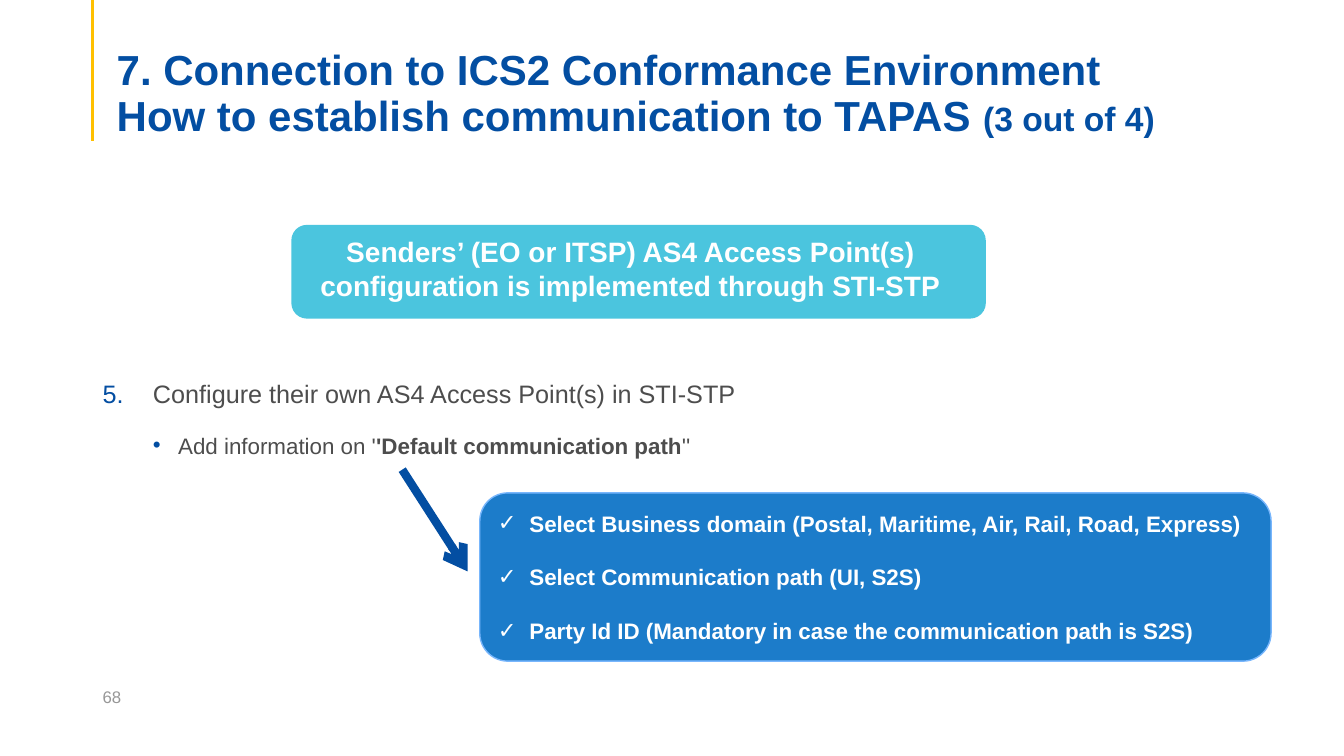
"""Build the slide on configuring the AS4 access points in STI-STP."""
from dataclasses import dataclass, field
from typing import Any

from lxml import etree
from pptx import Presentation
from pptx import util as u
from pptx.dml.color import RGBColor
from pptx.enum import shapes, text
from pptx.oxml import ns
from pptx.slide import Slide
from pptx.text.text import TextFrame

NAVY = RGBColor(0x03, 0x4E, 0xA2)
BLUE = RGBColor(0x1C, 0x7C, 0xCA)
SKY = RGBColor(0x78, 0xB6, 0xFC)
TEAL = RGBColor(0x4B, 0xC5, 0xDE)
GOLD = RGBColor(0xFF, 0xC0, 0x00)
DARK_GREY = RGBColor(0x4D, 0x4D, 0x4D)
LIGHT_GREY = RGBColor(0x97, 0x97, 0x97)
WHITE = RGBColor(0xFF, 0xFF, 0xFF)

Frame = tuple[float, float, float, float]
CHECK = {"buChar": {"char": "✓"}}
DOT = {"buChar": {"char": "•"}}
FROM_FIVE = {"buAutoNum": {"type": "arabicPeriod", "startAt": "5"}}


@dataclass(frozen=True)
class Piece:
    """A stretch of text in one font."""
    words: str
    size: float
    color: RGBColor
    bold: bool = False


@dataclass(frozen=True)
class Line:
    """A paragraph with its layout and bullet."""
    pieces: list[Piece]
    layout: dict[str, Any] = field(default_factory=dict)
    bullet: dict[str, dict[str, str]] = field(default_factory=dict)
    bullet_color: RGBColor = WHITE
    margin: float = 0
    hanging: float = 0


@dataclass(frozen=True)
class TextArea:
    """A text box with its frame and paragraphs."""
    frame: Frame
    lines: list[Line]
    anchor: text.MSO_ANCHOR = text.MSO_ANCHOR.TOP
    bottom_inset: float = 3.6


@dataclass(frozen=True)
class Stroke:
    """A straight line, with or without an arrowhead."""
    ends: Frame
    color: RGBColor
    width: float
    arrow: bool = False


def set_all(target: Any, values: dict[str, Any]) -> None:
    """Set attributes from a dict of format values."""
    for name, value in values.items():
        setattr(target, name, value)


def add_element(parent: Any, tag: str, **attributes: str) -> Any:
    """Append a drawing element."""
    return etree.SubElement(parent, ns.qn(f"a:{tag}"), attributes)


def write_lines(text_frame: TextFrame, lines: list[Line]) -> None:
    """Fill a text frame with paragraphs."""
    for index, line in enumerate(lines):
        paragraph = text_frame.add_paragraph() if index else text_frame.paragraphs[0]
        set_all(paragraph, line.layout)
        if line.bullet:
            properties = paragraph._p.get_or_add_pPr()
            properties.set("marL", str(u.Pt(line.margin)))
            properties.set("indent", str(-u.Pt(line.hanging)))
            add_element(add_element(properties, "buClr"), "srgbClr", val=str(line.bullet_color))
            add_element(properties, "buFont", typeface="Arial")
            for tag, attributes in line.bullet.items():
                add_element(properties, tag, **attributes)
        for piece in line.pieces:
            run = paragraph.add_run()
            run.text = piece.words
            set_all(run.font, {"name": "Arial", "size": u.Pt(piece.size), "bold": piece.bold})
            run.font.color.rgb = piece.color


def add_text_area(slide: Slide, area: TextArea) -> None:
    """Draw a text box."""
    text_frame = slide.shapes.add_textbox(*map(u.Pt, area.frame)).text_frame
    set_all(text_frame, {"word_wrap": True, "vertical_anchor": area.anchor,
                         "margin_bottom": u.Pt(area.bottom_inset)})
    write_lines(text_frame, area.lines)


def add_panel(slide: Slide, frame: Frame, fill: RGBColor, outline: RGBColor | None = None) -> TextFrame:
    """Draw a rounded panel and return its text frame."""
    shape = slide.shapes.add_shape(shapes.MSO_SHAPE.ROUNDED_RECTANGLE, *map(u.Pt, frame))
    shape.shadow.inherit = False
    shape.fill.solid()
    shape.fill.fore_color.rgb = fill
    if outline is None:
        shape.line.fill.background()
    else:
        shape.line.color.rgb = outline
        shape.line.width = u.Pt(1)
    set_all(shape.text_frame, {"word_wrap": True, "vertical_anchor": text.MSO_ANCHOR.MIDDLE})
    return shape.text_frame


def add_stroke(slide: Slide, stroke: Stroke) -> None:
    """Draw a straight line."""
    connector = slide.shapes.add_connector(shapes.MSO_CONNECTOR.STRAIGHT, *map(u.Pt, stroke.ends))
    connector.line.color.rgb = stroke.color
    connector.line.width = u.Pt(stroke.width)
    if stroke.arrow:
        add_element(connector.line._get_or_add_ln(), "tailEnd", type="arrow")
    add_element(connector._element.spPr, "effectLst")


TITLE_LAYOUT = {"line_spacing": 0.9}
TITLE = TextArea((76.3, 38.2, 828, 61.9), [
    Line([Piece("7. Connection to ICS2 Conformance Environment", 30, NAVY, True)], TITLE_LAYOUT),
    Line([Piece("How to establish communication to TAPAS ", 30, NAVY, True),
          Piece("(3 out of 4)", 24, NAVY, True)], TITLE_LAYOUT),
], text.MSO_ANCHOR.BOTTOM, 0)
STEPS = TextArea((66.2, 255.6, 856.1, 151.2), [
    Line([Piece("Configure their own AS4 Access Point(s) in STI-STP", 18, DARK_GREY)],
         {"line_spacing": 1.5, "space_after": u.Pt(12)}, FROM_FIVE, NAVY, 36, 36),
    Line([Piece("Add information on '", 16, DARK_GREY),
          Piece("'Default communication path", 16, DARK_GREY, True),
          Piece("''", 16, DARK_GREY)],
         {"level": 1, "space_before": u.Pt(5), "space_after": u.Pt(12)}, DOT, NAVY, 54, 18),
])
BANNER_TEXT = TextArea((202.3, 164.2, 496.1, 60.5), [
    Line([Piece("Senders’ (EO or ITSP) AS4 Access Point(s) configuration is "
                "implemented through STI-STP", 20, WHITE, True)],
         {"alignment": text.PP_ALIGN.CENTER, "space_after": u.Pt(12)}),
])
PAGE_NUMBER = TextArea((66.2, 483.1, 216, 28.8), [Line([Piece("68", 12, LIGHT_GREY)])],
                       text.MSO_ANCHOR.MIDDLE)
SELECTIONS = [
    ("Select Business domain (Postal, Maritime, Air, Rail, Road, Express)", 1.0),
    ("Select Communication path (UI, S2S)", 2.0),
    ("Party Id ID (Mandatory in case the communication path is S2S)", 2.0),
]
STROKES = [
    Stroke((66.2, 0, 66.2, 100.8), GOLD, 2.25),
    Stroke((287.3, 335.5, 334.1, 408.2), NAVY, 6, True),
]


def main() -> None:
    """Draw the slide and save it."""
    presentation = Presentation()
    set_all(presentation, {"slide_width": u.Pt(960), "slide_height": u.Pt(540)})
    slide = presentation.slides.add_slide(presentation.slide_layouts[6])
    add_panel(slide, (208.1, 160.6, 496.1, 67), TEAL)
    for area in (TITLE, STEPS, BANNER_TEXT, PAGE_NUMBER):
        add_text_area(slide, area)
    for stroke in STROKES:
        add_stroke(slide, stroke)
    selection_frame = add_panel(slide, (342.7, 352.1, 565.2, 120.2), BLUE, SKY)
    write_lines(selection_frame, [
        Line([Piece(words, 16, WHITE, True)],
             {"line_spacing": spacing, "alignment": text.PP_ALIGN.LEFT}, CHECK, WHITE, 22.5, 22.5)
        for words, spacing in SELECTIONS
    ])
    presentation.save("out.pptx")


if __name__ == "__main__":
    main()
